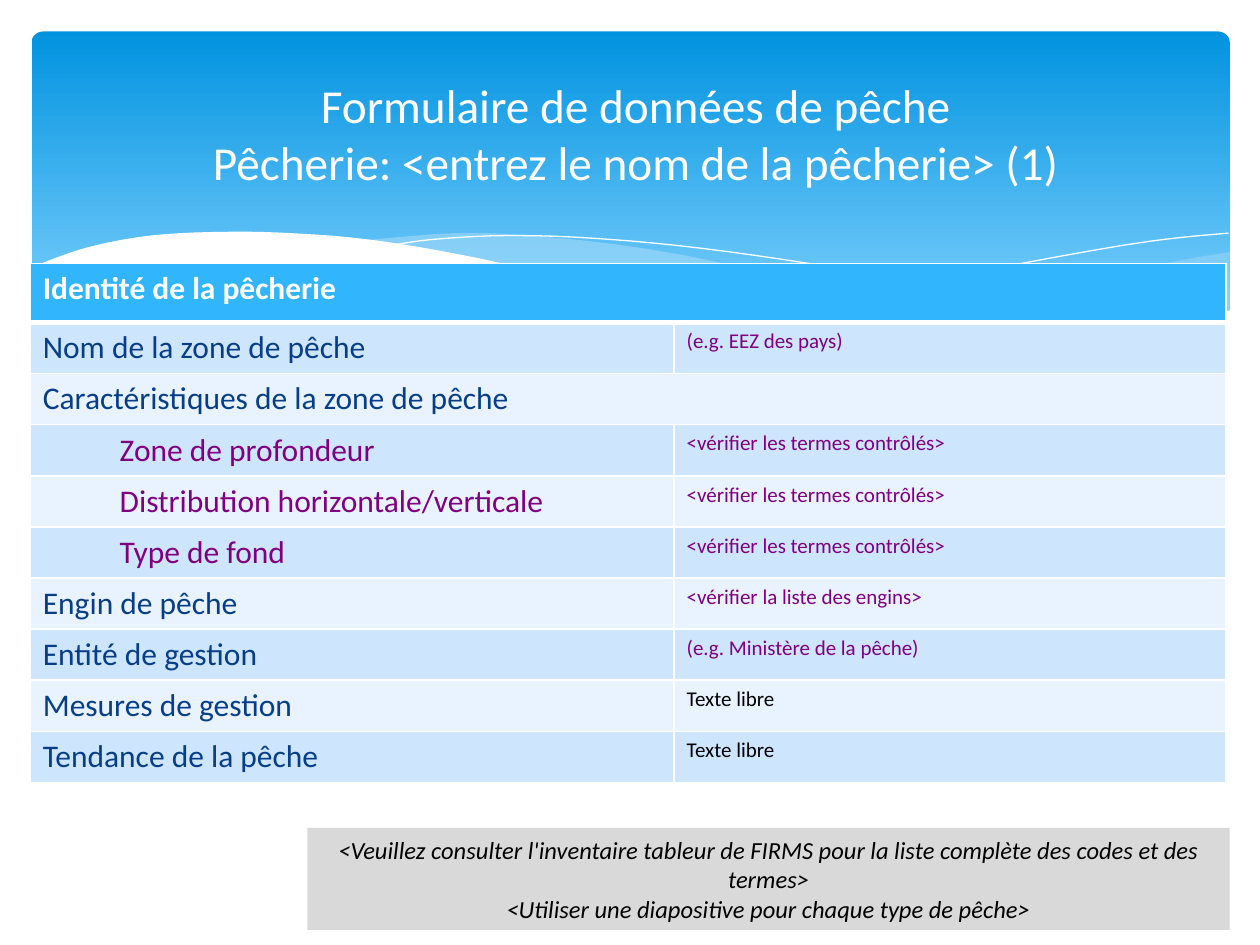
from lxml import etree
from pptx import Presentation, util as u
from pptx.dml.color import RGBColor
from pptx.enum import shapes, text
from pptx.oxml import ns

COLORS = {
    "white": "FFFFFF", "black": "000000", "deep_blue": "0293E0", "pale_blue": "83D3FE",
    "wave": "C6E7FC", "header": "31B6FD", "band_dark": "CEE5FE", "band_light": "E8F3FF",
    "navy": "073E87", "purple": "800080", "grey": "D9D9D9",
}
CHECK_TERMS = "<vérifier les termes contrôlés>"
# label, value, value colour; a value of None spans both columns
ROWS = [
    ("Nom de la zone de pêche", "(e.g. EEZ des pays)", "purple"),
    ("Caractéristiques de la zone de pêche", None, None),
    ("Zone de profondeur", CHECK_TERMS, "purple"),
    ("Distribution horizontale/verticale", CHECK_TERMS, "purple"),
    ("Type de fond", CHECK_TERMS, "purple"),
    ("Engin de pêche", "<vérifier la liste des engins>", "purple"),
    ("Entité de gestion", "(e.g. Ministère de la pêche)", "purple"),
    ("Mesures de gestion", "Texte libre", "black"),
    ("Tendance de la pêche", "Texte libre", "black"),
]
# Key points of the curves, in inches
RIGHT_WAVE = [
    [(9.76, 2), (9.35, 2.07), (8.61, 2.23), (7.53, 2.48), (6.61, 2.65)],
    [(6.61, 2.65), (7.19, 2.72), (8.03, 2.78), (8.63, 2.75), (9.21, 2.65), (9.76, 2.47)],
]
MIDDLE_WAVE = [
    [(8.93, 2.73), (8.07, 2.6), (7.06, 2.4), (6.29, 2.22), (5.55, 2.05), (4.89, 1.94),
     (4.2, 1.87), (3.61, 1.85), (2.86, 1.91)],
    [(2.86, 1.91), (3.62, 2.03), (4.49, 2.22), (5.66, 2.48), (6.5, 2.64), (7.22, 2.74),
     (7.96, 2.78), (8.93, 2.73)],
]
FRONT_WAVE = [
    [(9.77, 2.46), (9.3, 2.62), (8.75, 2.73), (8.09, 2.77), (7.26, 2.72), (6.26, 2.58),
     (5.29, 2.39), (4.47, 2.2), (3.65, 2.02), (2.92, 1.9), (2.3, 1.85), (1.77, 1.84),
     (1.19, 1.87), (0.67, 1.97), (0.23, 2.13)],
    [(0.23, 3.29), (9.77, 3.29)],
]
LONG_LINE = [[(3.09, 1.95), (3.44, 1.9), (4.01, 1.87), (4.69, 1.89), (5.56, 1.97),
              (6.65, 2.13), (7.6, 2.33), (8.31, 2.51), (9.07, 2.72)]]
SHORT_LINE = [[(6.13, 2.57), (6.95, 2.35), (7.76, 2.16), (8.66, 1.99), (9.24, 1.9),
               (9.75, 1.85)]]


def rgb(name):
    return RGBColor.from_string(COLORS[name])


def paint(target, name):
    target.fill.solid()
    target.fill.fore_color.rgb = rgb(name)


def write(para, words, color, **formats):
    para.text = words
    for name, value in {"name": "Calibri", **formats}.items():
        setattr(para.font, name, value)
    para.font.color.rgb = rgb(color)


def smooth(points, steps=5):
    """Return points along a Catmull-Rom curve through the key points."""
    padded = [points[0], *points, points[-1]]
    result = [points[0]]
    for a, b, c, d in zip(padded, padded[1:], padded[2:], padded[3:]):
        for step in range(1, steps + 1):
            t = step / steps
            result.append(tuple(
                (2 * q + (r - p) * t + (2 * p - 5 * q + 4 * r - s) * t ** 2
                 + (3 * q - p - 3 * r + s) * t ** 3) / 2
                for p, q, r, s in zip(a, b, c, d)))
    return result


def add_curve(page, curves, fill=None, alpha=100):
    """Draw a filled wave, or a white hairline when there is no fill."""
    points = [(u.Inches(x), u.Inches(y)) for curve in curves for x, y in smooth(curve)]
    builder = page.shapes.build_freeform(*points[0], scale=1.0)
    builder.add_line_segments(points[1:], close=fill is not None)
    wave = builder.convert_to_shape()
    wave.shadow.inherit = False
    if fill is None:
        wave.fill.background()
        wave.line.color.rgb = rgb("white")
        wave.line.width = u.Pt(0)
        return
    paint(wave, fill)
    wave.line.fill.background()
    if alpha < 100:
        color = wave.fill._xPr.find(".//" + ns.qn("a:srgbClr"))
        etree.SubElement(color, ns.qn("a:alpha"), val=str(alpha * 1000))


def add_backdrop(page, left, top, width, height):
    panel = page.shapes.add_shape(
        shapes.MSO_SHAPE.ROUNDED_RECTANGLE, left, top, width, height)
    panel.adjustments[0] = 0.034
    panel.shadow.inherit = False
    panel.line.fill.background()
    panel.fill.gradient()
    panel.fill.gradient_angle = 270
    stops = [(0, "deep_blue"), (0.9, "pale_blue")]
    for stop, (position, color) in zip(panel.fill.gradient_stops, stops):
        stop.position = position
        stop.color.rgb = rgb(color)
    add_curve(page, RIGHT_WAVE, "wave", 29)
    add_curve(page, MIDDLE_WAVE, "wave", 40)
    add_curve(page, LONG_LINE)
    add_curve(page, SHORT_LINE)
    add_curve(page, FRONT_WAVE, "white")


def place_title(page, left, top, width, height):
    title = page.shapes.title
    page.shapes._spTree.append(title._element)  # in front of the backdrop
    title.left, title.top, title.width, title.height = left, top, width, height
    frame = title.text_frame
    frame.word_wrap = True
    frame.auto_size = text.MSO_AUTO_SIZE.NONE
    frame.vertical_anchor = text.MSO_ANCHOR.MIDDLE
    para = frame.paragraphs[0]
    para.alignment = text.PP_ALIGN.CENTER
    write(para, "Formulaire de données de pêche\vPêcherie: <entrez le nom de la pêcherie> (1)",
          "white", size=u.Pt(27))


def add_note(page, left, top, width, height):
    box = page.shapes.add_shape(shapes.MSO_SHAPE.RECTANGLE, left, top, width, height)
    box.shadow.inherit = False
    paint(box, "grey")
    box.line.fill.background()
    frame = box.text_frame
    frame.word_wrap = True
    lines = ["<Veuillez consulter l'inventaire tableur de FIRMS pour la liste complète "
             "des codes et des termes>",
             "<Utiliser une diapositive pour chaque type de pêche>"]
    for index, line in enumerate(lines):
        para = frame.add_paragraph() if index else frame.paragraphs[0]
        para.alignment = text.PP_ALIGN.CENTER
        write(para, line, "black", size=u.Pt(14), italic=True)


def add_borders(cell, top=1, bottom=1):
    properties = cell._tc.get_or_add_tcPr()
    for side, points in {"L": 1, "R": 1, "T": top, "B": bottom}.items():
        line = etree.SubElement(properties, ns.qn("a:ln" + side), w=str(u.Pt(points)))
        fill = etree.SubElement(line, ns.qn("a:solidFill"))
        etree.SubElement(fill, ns.qn("a:srgbClr"), val=COLORS["white"])


def add_form(page, left, top, width, height):
    table = page.shapes.add_table(len(ROWS) + 1, 2, left, top, width, height).table
    table.columns[0].width = u.Inches(5.11)
    table.columns[1].width = width - u.Inches(5.11)
    header_height = u.Inches(0.47)
    for index, row in enumerate(table.rows):
        row.height = (height - header_height) // len(ROWS) if index else header_height

    # Header row
    for cell in table.rows[0].cells:
        add_borders(cell, bottom=3)
        paint(cell, "header")
    table.cell(0, 0).merge(table.cell(0, 1))
    write(table.cell(0, 0).text_frame.paragraphs[0], "Identité de la pêcherie", "white",
          size=u.Pt(18), bold=True)

    # Banded rows
    for index, (label, value, value_color) in enumerate(ROWS, 1):
        name_cell, value_cell = table.cell(index, 0), table.cell(index, 1)
        for cell in (name_cell, value_cell):
            add_borders(cell, top=3 if index == 1 else 1)
            paint(cell, "band_dark" if index % 2 else "band_light")
        para = name_cell.text_frame.paragraphs[0]
        detail = value == CHECK_TERMS
        if detail:
            para._p.get_or_add_pPr().set("marL", str(u.Inches(0.61)))
        write(para, label, "purple" if detail else "navy", size=u.Pt(18), bold=False)
        if value is None:
            name_cell.merge(value_cell)
        else:
            write(value_cell.text_frame.paragraphs[0], value, value_color,
                  size=u.Pt(12), bold=False)


def main():
    deck = Presentation()
    deck.slide_width, deck.slide_height = u.Inches(10), u.Inches(7.5)
    page = deck.slides.add_slide(deck.slide_layouts[5])
    regions = [
        (add_backdrop, (0.25, 0.25, 9.51, 2.7)),
        (place_title, (0.28, 0.37, 9.53, 1.37)),
        (add_note, (2.44, 6.57, 7.32, 0.81)),
        (add_form, (0.24, 2.09, 9.49, 4.1)),
    ]
    for build, box in regions:
        build(page, *map(u.Inches, box))
    deck.save("out.pptx")


if __name__ == "__main__":
    main()
